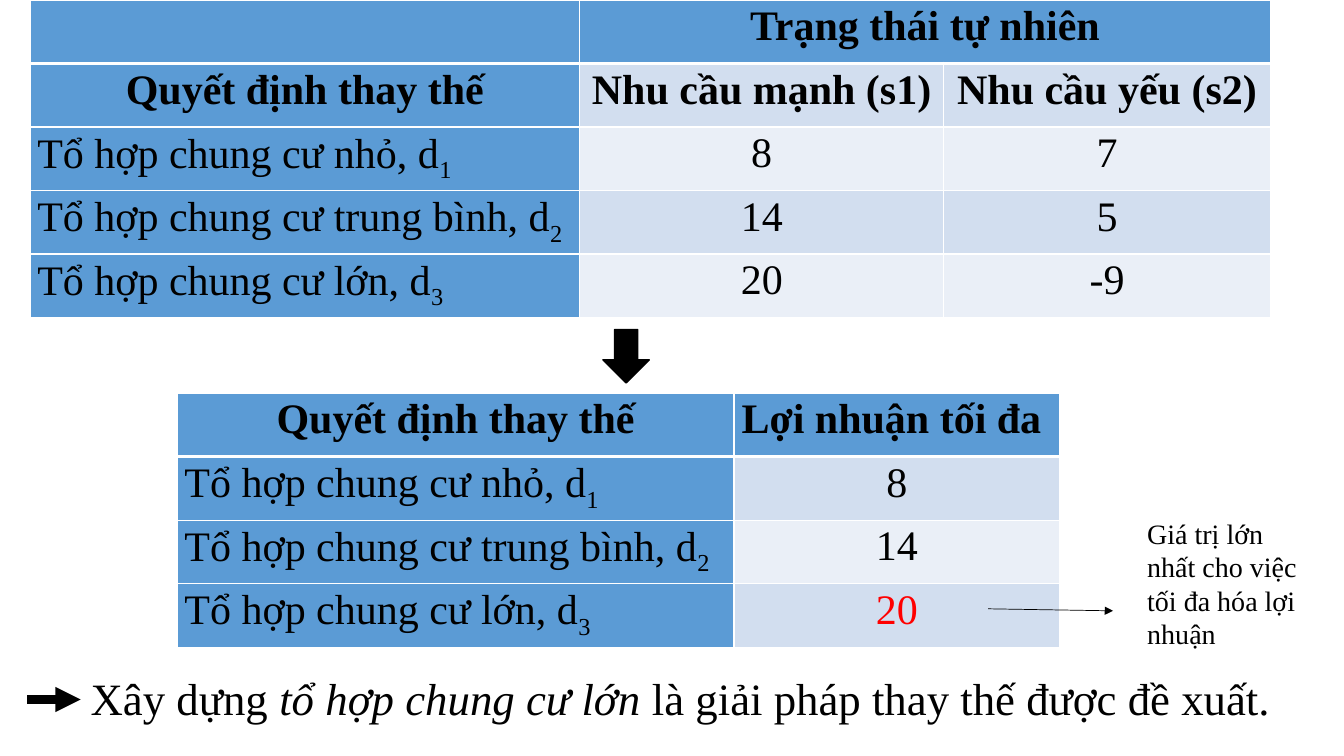
from dataclasses import dataclass

from lxml import etree
from pptx import Presentation
from pptx import util as u
from pptx.dml.color import RGBColor
from pptx.enum import shapes, text
from pptx.oxml import ns

PX = 9144  # 100 px to the inch


@dataclass(frozen=True)
class Theme:
    font: str = "Times New Roman"
    black: str = "000000"
    white: str = "FFFFFF"
    red: str = "FF0000"
    blue: str = "5B9BD5"
    bands: tuple = ("EAEFF7", "D2DEEF")
    table_size: int = 30
    conclusion_size: int = 32
    note_size: int = 20


THEME = Theme()
DECISION = "Quyết định thay thế"
OPTIONS = [
    ("Tổ hợp chung cư nhỏ, d", "1"),
    ("Tổ hợp chung cư trung bình, d", "2"),
    ("Tổ hợp chung cư lớn, d", "3"),
]
STRONG_DEMAND = ["8", "14", "20"]
WEAK_DEMAND = ["7", "5", "-9"]


def px(*lengths):
    return [u.Emu(length * PX) for length in lengths]


def color(value):
    return RGBColor.from_string(value)


def format_run(run, size, ink=THEME.black, bold=False, italic=False):
    font = run.font
    font.name, font.size = THEME.font, u.Pt(size)
    font.bold, font.italic = bold, italic
    font.color.rgb = color(ink)


def set_borders(cell, top, bottom):
    properties = cell._tc.get_or_add_tcPr()
    widths = {"lnL": 1, "lnR": 1, "lnT": top, "lnB": bottom}
    for index, (side, width) in enumerate(widths.items()):
        line = etree.Element(ns.qn(f"a:{side}"), w=str(u.Pt(width)))
        fill = etree.SubElement(line, ns.qn("a:solidFill"))
        etree.SubElement(fill, ns.qn("a:srgbClr"), val=THEME.white)
        properties.insert(index, line)


def fill_cell(cell, content, background, bold, ink):
    """Write a string centred, or a (label, subscript) pair on the left."""
    cell.fill.solid()
    cell.fill.fore_color.rgb = color(background)
    cell.margin_left, cell.margin_right = px(7, 7)
    cell.margin_top = cell.margin_bottom = 0
    if not content:
        return
    paragraph = cell.text_frame.paragraphs[0]
    paragraph.line_spacing = 1.07
    if isinstance(content, tuple):
        for part in content:
            paragraph.add_run().text = part
        paragraph.runs[1]._r.get_or_add_rPr().set("baseline", "-25000")
    else:
        paragraph.text = content
        paragraph.alignment = text.PP_ALIGN.CENTER
    for run in paragraph.runs:
        format_run(run, THEME.table_size, ink, bold)


def add_payoff_table(slide, left, top, column_widths, row_height, rows,
                     bold_rows, first_band, red_cell=None):
    frame = slide.shapes.add_table(
        len(rows), len(column_widths),
        *px(left, top, sum(column_widths), row_height * len(rows)))
    table = frame.table
    table.first_row = table.horz_banding = False
    for column, width in zip(table.columns, column_widths):
        column.width = u.Emu(width * PX)
    for row_index, row in enumerate(rows):
        for column_index, content in enumerate(row):
            cell = table.cell(row_index, column_index)
            is_header = row_index == 0 or column_index == 0
            band = THEME.bands[(row_index + first_band) % 2]
            is_red = (row_index, column_index) == red_cell
            fill_cell(cell, content, THEME.blue if is_header else band,
                      row_index < bold_rows,
                      THEME.red if is_red else THEME.black)
            set_borders(cell, top=3 if row_index == 1 else 1,
                        bottom=3 if row_index == 0 else 1)
    return table


def add_arrow(slide, start, end, width):
    arrow = slide.shapes.add_connector(
        shapes.MSO_CONNECTOR.STRAIGHT, *px(*start, *end))
    arrow.line.color.rgb = color(THEME.black)
    arrow.line.width = u.Pt(width)
    etree.SubElement(arrow.line._get_or_add_ln(), ns.qn("a:tailEnd"),
                     type="triangle")
    etree.SubElement(arrow._element.spPr, ns.qn("a:effectLst"))


def add_text(slide, box, parts, size, wrap):
    """Place one paragraph made of (words, italic) parts."""
    frame = slide.shapes.add_textbox(*px(*box)).text_frame
    frame.word_wrap = wrap
    for words, italic in parts:
        run = frame.paragraphs[0].add_run()
        run.text = words
        format_run(run, size, italic=italic)


def add_states_region(slide, left, top):
    rows = [["", "Trạng thái tự nhiên", ""],
            [DECISION, "Nhu cầu mạnh (s1)", "Nhu cầu yếu (s2)"],
            *zip(OPTIONS, STRONG_DEMAND, WEAK_DEMAND)]
    table = add_payoff_table(slide, left, top, [545, 361, 324], 63, rows,
                             bold_rows=2, first_band=0)
    table.cell(0, 1).merge(table.cell(0, 2))
    # Arrow down to the maximum profits
    arrow = slide.shapes.add_shape(shapes.MSO_SHAPE.DOWN_ARROW,
                                   *px(left + 568, top + 327, 46, 53))
    arrow.shadow.inherit = False
    arrow.fill.solid()
    arrow.fill.fore_color.rgb = color(THEME.black)
    arrow.line.color.rgb = color(THEME.black)
    arrow.line.width = u.Pt(1)


def add_maximum_region(slide, left, top):
    rows = [[DECISION, "Lợi nhuận tối đa "], *zip(OPTIONS, STRONG_DEMAND)]
    add_payoff_table(slide, left, top, [552, 323], 63, rows,
                     bold_rows=1, first_band=0, red_cell=(3, 1))
    # Note on the largest value
    add_arrow(slide, (left + 804, top + 214), (left + 928, top + 216), 0.5)
    add_text(slide, (left + 952, top + 117, 180, 145),
             [("Giá trị lớn nhất cho việc tối đa hóa lợi nhuận", False)],
             THEME.note_size, wrap=True)


def add_conclusion(slide, left, top):
    add_arrow(slide, (left, top + 33), (left + 53, top + 33), 6)
    add_text(slide, (left + 53, top, 1227, 64),
             [("Xây dựng ", False), ("tổ hợp chung cư lớn ", True),
              ("là giải pháp thay thế được đề xuất.", False)],
             THEME.conclusion_size, wrap=False)


def main():
    presentation = Presentation()
    presentation.slide_width, presentation.slide_height = px(1333, 750)
    slide = presentation.slides.add_slide(presentation.slide_layouts[6])
    add_maximum_region(slide, 176, 390)
    add_conclusion(slide, 27, 661)
    add_states_region(slide, 30, 0)
    presentation.save("out.pptx")


if __name__ == "__main__":
    main()
